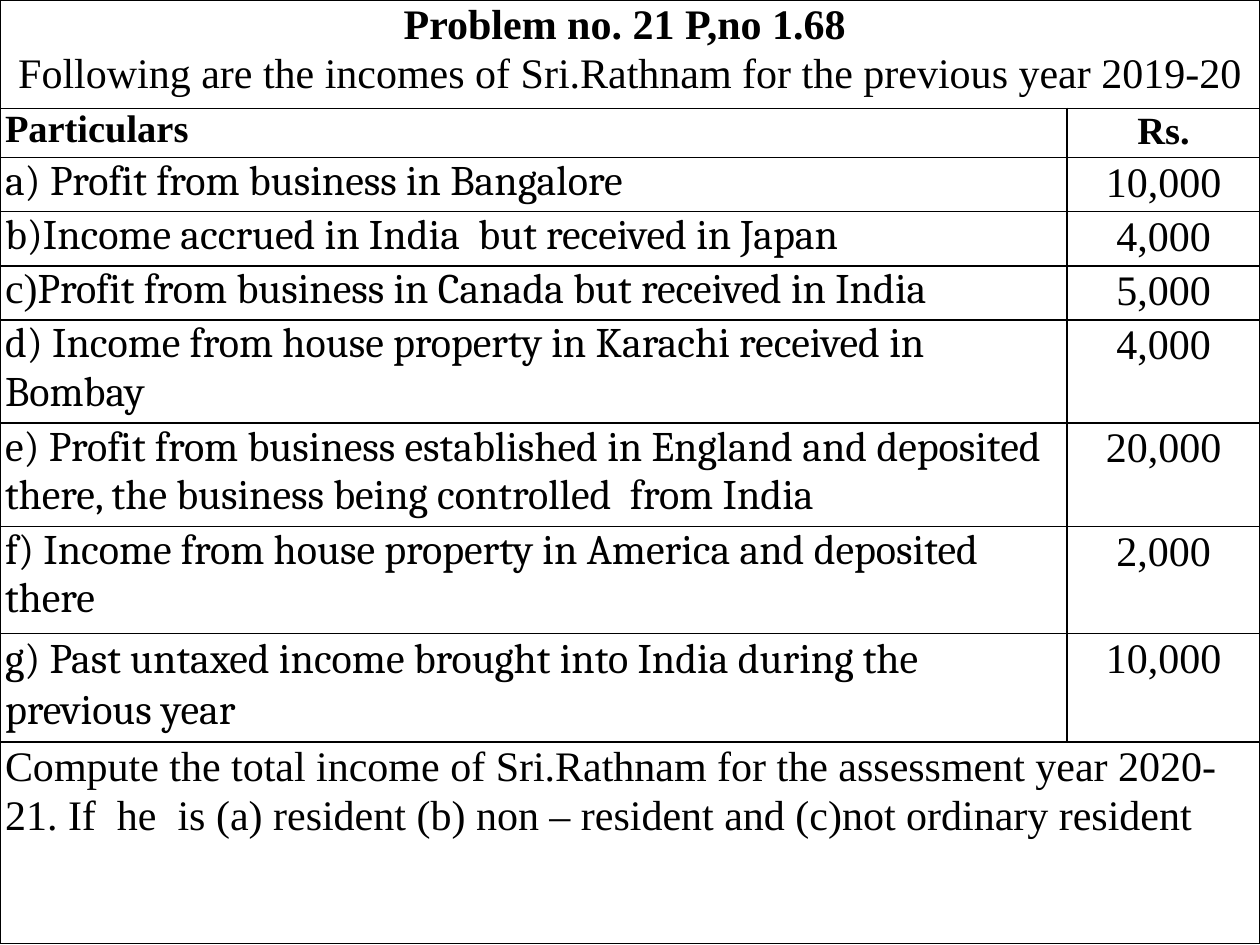
import pptx
import pptx.util
import pptx.dml.color
import pptx.enum.text
import pptx.oxml
import pptx.oxml.ns
from dataclasses import dataclass

ALIGN = pptx.enum.text.PP_ALIGN


@dataclass(frozen=True)
class Theme:
    ink: str = "000000"
    serif: str = "Times New Roman"
    body: str = "Cambria"
    text_size: float = 24
    head_size: float = 22
    spacing: float = 1.05
    border: float = 1
    inset: float = 0.04


class Deck:
    def __init__(self, theme, width, height):
        self.theme = theme
        self.prs = pptx.Presentation()
        self.prs.slide_width = pptx.util.Inches(width)
        self.prs.slide_height = pptx.util.Inches(height)
        self.s = self.prs.slides.add_slide(self.prs.slide_layouts[6])

    def table(self, col_shares, row_heights):
        """Full-slide table; columns as shares of the width, rows in inches."""
        w, h = self.prs.slide_width, self.prs.slide_height
        frame = self.s.shapes.add_table(len(row_heights), len(col_shares), 0, 0, w, h)
        self.tbl = frame.table
        self.tbl.first_row = self.tbl.horz_banding = False
        for col, share in zip(self.tbl.columns, col_shares):
            col.width = int(w * share)
        for row, height in zip(self.tbl.rows, row_heights):
            row.height = pptx.util.Inches(height)
        for cell in self.tbl.iter_cells():
            self.style_cell(cell)

    def style_cell(self, cell):
        side = pptx.util.Inches(self.theme.inset)
        margins = {"margin_left": side, "margin_right": side,
                   "margin_top": 0, "margin_bottom": 0}
        for name, value in margins.items():
            setattr(cell, name, value)
        # Borders come before the fill in the cell properties
        tc_pr = cell._tc.get_or_add_tcPr()
        for edge in ("lnL", "lnR", "lnT", "lnB"):
            tc_pr.append(pptx.oxml.parse_xml(
                f'<a:{edge} {pptx.oxml.ns.nsdecls("a")} '
                f'w="{pptx.util.Pt(self.theme.border)}"><a:solidFill>'
                f'<a:srgbClr val="{self.theme.ink}"/></a:solidFill></a:{edge}>'))
        cell.fill.background()

    def cell_text(self, row, col, *paragraphs, span=False):
        """Each paragraph is (runs, paragraph format); each run is (text, font format)."""
        cell = self.tbl.cell(row, col)
        if span:
            cell.merge(self.tbl.cell(row, len(self.tbl.columns) - 1))
        tf = cell.text_frame
        for i, (runs, fmt) in enumerate(paragraphs):
            p = tf.add_paragraph() if i else tf.paragraphs[0]
            for name, value in fmt.items():
                setattr(p, name, value)
            for text, font in runs:
                self.text_run(p, text, font)

    def text_run(self, p, text, font):
        r = p.add_run()
        r.text = text
        base = {"name": self.theme.serif, "bold": False,
                "size": pptx.util.Pt(self.theme.text_size)}
        for name, value in {**base, **font}.items():
            setattr(r.font, name, value)
        r.font.color.rgb = pptx.dml.color.RGBColor.from_string(self.theme.ink)


def main():
    theme = Theme()
    deck = Deck(theme, 10, 7.5)
    loose = {"line_spacing": theme.spacing}
    centred = {"alignment": ALIGN.CENTER, **loose}
    body = {"name": theme.body}
    head = {"bold": True, "size": pptx.util.Pt(theme.head_size)}

    # Item runs, paragraph format and amount
    items = [
        ([("a) Profit from business in Bangalore", body)], {}, "10,000"),
        ([("b)Income accrued in India  but received in Japan", body)], {}, "4,000"),
        ([("c)", {}), ("Profit from business in Canada but received in India", body)],
         {}, "5,000"),
        ([("d) Income from house property in Karachi received in Bombay", body)],
         {}, "4,000"),
        ([("e) Profit from business established in England and deposited there, "
           "the business being controlled  from India", body)], {}, "20,000"),
        ([("f) Income from house property in America and deposited there", body)],
         {}, "2,000"),
        ([("g) Past untaxed income brought into India during the previous year", body)],
         loose, "10,000"),
    ]
    deck.table([0.847, 0.153],
               [0.86, 0.39] + [0.43] * 3 + [0.82] * 2 + [0.85, 0.86, 1.6])

    # Title row
    deck.cell_text(0, 0,
                   ([("Problem no. 21 P,no 1.68 ", {"bold": True})], centred),
                   ([("Following are the incomes of Sri.Rathnam for the previous year "
                      "2019-20", {})], centred),
                   span=True)

    # Column heads
    deck.cell_text(1, 0, ([("Particulars", head)], {}))
    deck.cell_text(1, 1, ([("Rs.", head)], centred))

    # Incomes
    for row, (runs, fmt, amount) in enumerate(items, start=2):
        deck.cell_text(row, 0, (runs, fmt))
        deck.cell_text(row, 1, ([(amount, {})], centred))

    # Question row
    deck.cell_text(len(items) + 2, 0,
                   ([("Compute the total income of Sri.Rathnam for the assessment year "
                      "2020-21. If  he  is (a) resident (b) non – resident and "
                      "(c)not ordinary resident", {})], loose),
                   span=True)

    deck.prs.save("out.pptx")


if __name__ == "__main__":
    main()
